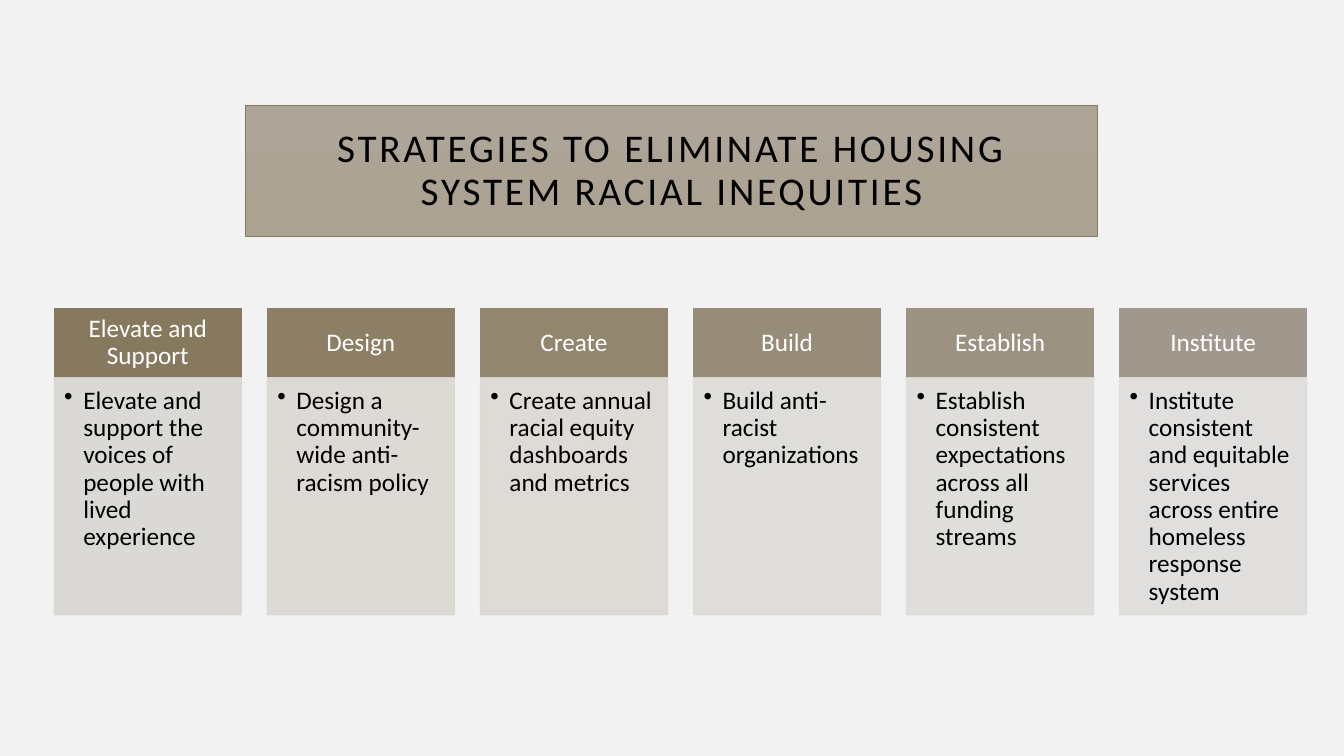
import pptx
import pptx.util
import pptx.dml.color
import pptx.enum.shapes
import pptx.enum.text
import pptx.oxml
import pptx.oxml.ns

Cm = pptx.util.Cm
Pt = pptx.util.Pt
RGBColor = pptx.dml.color.RGBColor
Align = pptx.enum.text.PP_ALIGN
Anchor = pptx.enum.text.MSO_ANCHOR

PAPER = RGBColor(0xF2, 0xF2, 0xF2)
BLACK = RGBColor(0x00, 0x00, 0x00)
WHITE = RGBColor(0xFF, 0xFF, 0xFF)
TITLE_TOP = RGBColor(0xAD, 0xA5, 0x97)
TITLE_BOTTOM = RGBColor(0xAB, 0xA2, 0x92)
TITLE_EDGE = RGBColor(0x87, 0x79, 0x5D)

STRATEGIES = [
    ("Elevate and Support",
     "Elevate and support the voices of people with lived experience",
     RGBColor(0x87, 0x79, 0x5D), RGBColor(0xD9, 0xD7, 0xD2)),
    ("Design",
     "Design a community-wide anti-racism policy",
     RGBColor(0x8D, 0x7F, 0x65), RGBColor(0xDB, 0xD8, 0xD4)),
    ("Create",
     "Create annual racial equity dashboards and metrics",
     RGBColor(0x93, 0x86, 0x6E), RGBColor(0xDC, 0xD9, 0xD5)),
    ("Build",
     "Build anti-racist organizations",
     RGBColor(0x97, 0x8C, 0x78), RGBColor(0xDD, 0xDB, 0xD7)),
    ("Establish",
     "Establish consistent expectations across all funding streams",
     RGBColor(0x9B, 0x92, 0x82), RGBColor(0xDE, 0xDC, 0xD9)),
    ("Institute",
     "Institute consistent and equitable services across entire homeless response system",
     RGBColor(0xA0, 0x98, 0x8C), RGBColor(0xDF, 0xDD, 0xDB)),
]

COLUMN_LEFT = 1.37
COLUMN_PITCH = 5.37
COLUMN_WIDTH = 4.71
HEADER_TOP = 7.77
HEADER_HEIGHT = 1.75
BODY_HEIGHT = 5.97


def add_box(page, left, top, width, height, color, edge_width=1):
    box = page.shapes.add_shape(
        pptx.enum.shapes.MSO_SHAPE.RECTANGLE,
        Cm(left), Cm(top), Cm(width), Cm(height))
    box.shadow.inherit = False
    box.fill.solid()
    box.fill.fore_color.rgb = color
    box.line.color.rgb = color
    box.line.width = Pt(edge_width)
    return box


def write_text(box, text, *, size=18, color=BLACK, align=Align.CENTER,
               anchor=Anchor.MIDDLE, insets=(0.36, 0.2, 0.36, 0.2), tracking=0):
    frame = box.text_frame
    frame.word_wrap = True
    frame.vertical_anchor = anchor
    frame.margin_left, frame.margin_top, frame.margin_right, frame.margin_bottom = map(Cm, insets)
    para = frame.paragraphs[0]
    para.alignment = align
    para.line_spacing = 0.9
    span = para.add_run()
    span.text = text
    span.font.name = "Calibri"
    span.font.size = Pt(size)
    span.font.color.rgb = color
    if tracking:
        span.font._element.set("spc", str(tracking * 100))
    return para


def add_bullet(para, indent):
    props = para._element.get_or_add_pPr()
    props.set("marL", str(Cm(indent)))
    props.set("indent", str(-Cm(indent)))
    bullet = pptx.oxml.parse_xml(
        f'<a:buChar {pptx.oxml.ns.nsdecls("a")} char="•"/>')
    props.append(bullet)


def set_opacity(box, percent):
    for color in box._element.spPr.iter(pptx.oxml.ns.qn("a:srgbClr")):
        color.append(pptx.oxml.parse_xml(
            f'<a:alpha {pptx.oxml.ns.nsdecls("a")} val="{percent * 1000}"/>'))


def add_title(page, text):
    box = add_box(page, 6.2, 2.67, 21.46, 3.3, TITLE_EDGE, edge_width=0.75)
    box.fill.gradient()
    box.fill.gradient_angle = 270
    for stop, color in zip(box.fill.gradient_stops, (TITLE_TOP, TITLE_BOTTOM)):
        stop.color.rgb = color
    write_text(box, text, size=28, insets=(0.51,) * 4, tracking=2)


def add_strategy(page, left, heading, detail, header_color, body_color):
    header = add_box(page, left, HEADER_TOP, COLUMN_WIDTH, HEADER_HEIGHT, header_color)
    write_text(header, heading, color=WHITE)
    body = add_box(page, left, HEADER_TOP + HEADER_HEIGHT,
                   COLUMN_WIDTH, BODY_HEIGHT, body_color)
    set_opacity(body, 90)
    para = write_text(body, detail, align=Align.LEFT, anchor=Anchor.TOP,
                      insets=(0.25, 0.25, 0.36, 0.41))
    add_bullet(para, 0.48)


def main():
    deck = pptx.Presentation()
    deck.slide_width = Cm(33.87)
    deck.slide_height = Cm(19.05)
    page = deck.slides.add_slide(deck.slide_layouts[6])
    page.background.fill.solid()
    page.background.fill.fore_color.rgb = PAPER
    add_title(page, "STRATEGIES TO ELIMINATE HOUSING SYSTEM RACIAL INEQUITIES")
    for index, strategy in enumerate(STRATEGIES):
        add_strategy(page, COLUMN_LEFT + index * COLUMN_PITCH, *strategy)
    deck.save("out.pptx")


if __name__ == "__main__":
    main()
